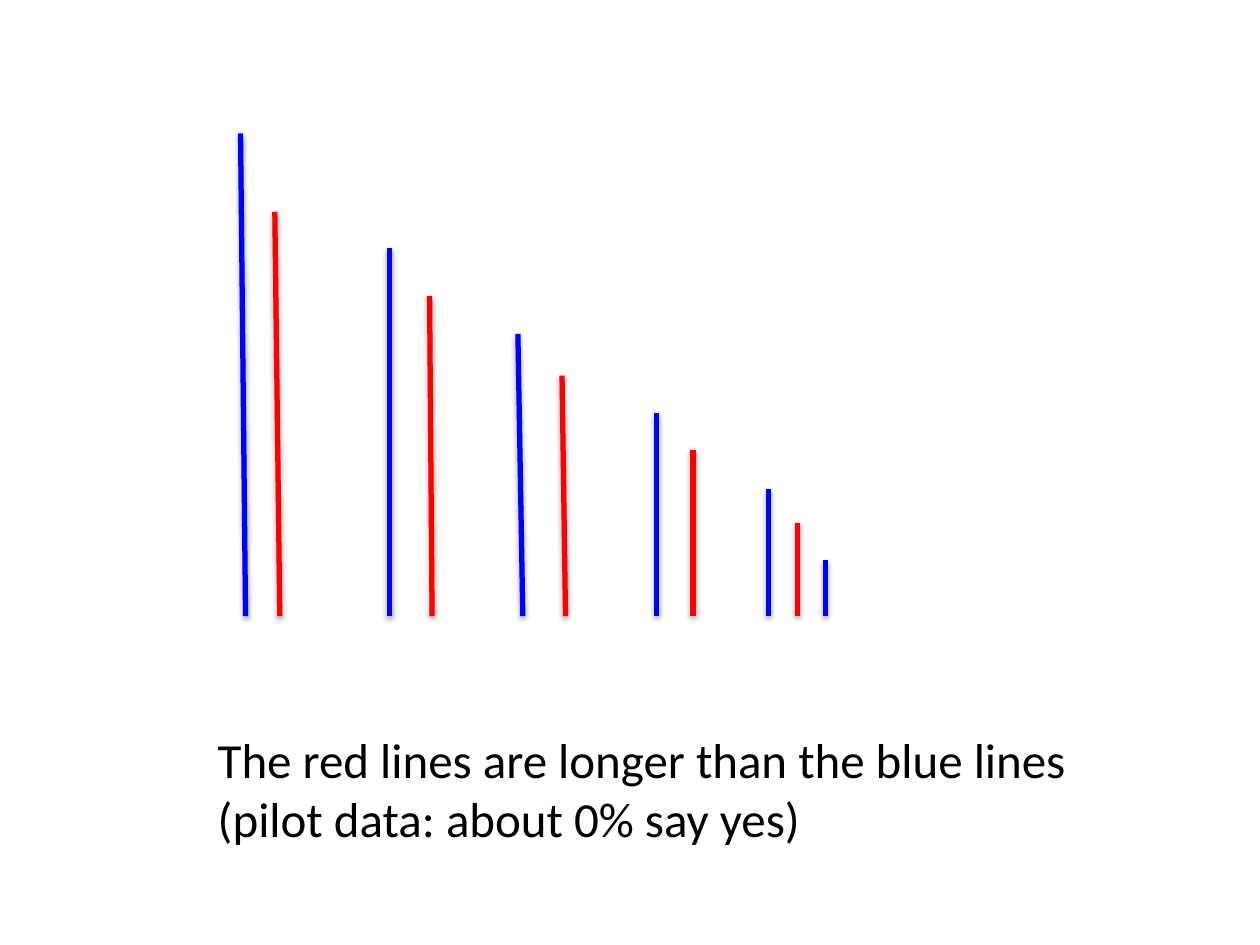
from lxml.etree import SubElement
from pptx import Presentation
from pptx.dml.color import RGBColor
from pptx.enum.shapes import MSO_CONNECTOR
from pptx.enum.text import MSO_AUTO_SIZE
from pptx.oxml.ns import qn
from pptx.util import Cm, Pt

RED = RGBColor(0xFF, 0x00, 0x00)
BLUE = RGBColor(0x00, 0x00, 0xFF)
BLACK = RGBColor(0x00, 0x00, 0x00)

CAPTION = [
    "The red lines are longer than the blue lines",
    "(pilot data: about 0% say yes)",
]
BASELINE = 12.42
# top x, top y, bottom x in centimetres
RED_LINES = [
    (5.54, 4.27, 5.64),
    (8.66, 5.97, 8.71),
    (11.33, 7.57, 11.4),
    (13.97, 9.07, 13.97),
    (16.08, 10.54, 16.08),
]
BLUE_LINES = [
    (4.85, 2.69, 4.95),
    (7.85, 5.0, 7.85),
    (10.44, 6.73, 10.54),
    (13.23, 8.33, 13.23),
    (15.49, 9.86, 15.49),
    (16.64, 11.28, 16.64),
]


def add_shadow(line):
    effects = SubElement(line._element.spPr, qn("a:effectLst"))
    shadow = SubElement(effects, qn("a:outerShdw"), blurRad="40000",
                        dist="20000", dir="5400000", rotWithShape="0")
    color = SubElement(shadow, qn("a:srgbClr"), val=str(BLACK))
    SubElement(color, qn("a:alpha"), val="38000")


def add_line(page, top_x, top_y, bottom_x, color):
    line = page.shapes.add_connector(
        MSO_CONNECTOR.STRAIGHT,
        Cm(top_x), Cm(top_y), Cm(bottom_x), Cm(BASELINE))
    line.line.color.rgb = color
    line.line.width = Pt(3)
    add_shadow(line)


def add_text(page, paragraphs, left, top, width, height,
             size=28, font="Calibri", color=BLACK):
    box = page.shapes.add_textbox(Cm(left), Cm(top), Cm(width), Cm(height))
    frame = box.text_frame
    frame.word_wrap = True
    frame.auto_size = MSO_AUTO_SIZE.SHAPE_TO_FIT_TEXT
    for index, text in enumerate(paragraphs):
        para = frame.add_paragraph() if index else frame.paragraphs[0]
        span = para.add_run()
        span.text = text
        span.font.size = Pt(size)
        span.font.name = font
        span.font.color.rgb = color


def main():
    deck = Presentation()
    deck.slide_width, deck.slide_height = Cm(25.4), Cm(19.05)
    page = deck.slides.add_slide(deck.slide_layouts[6])
    for color, lines in ((RED, RED_LINES), (BLUE, BLUE_LINES)):
        for top_x, top_y, bottom_x in lines:
            add_line(page, top_x, top_y, bottom_x, color)
    add_text(page, CAPTION, left=4.14, top=14.58, width=17.96, height=2.64)
    deck.save("out.pptx")


if __name__ == "__main__":
    main()
